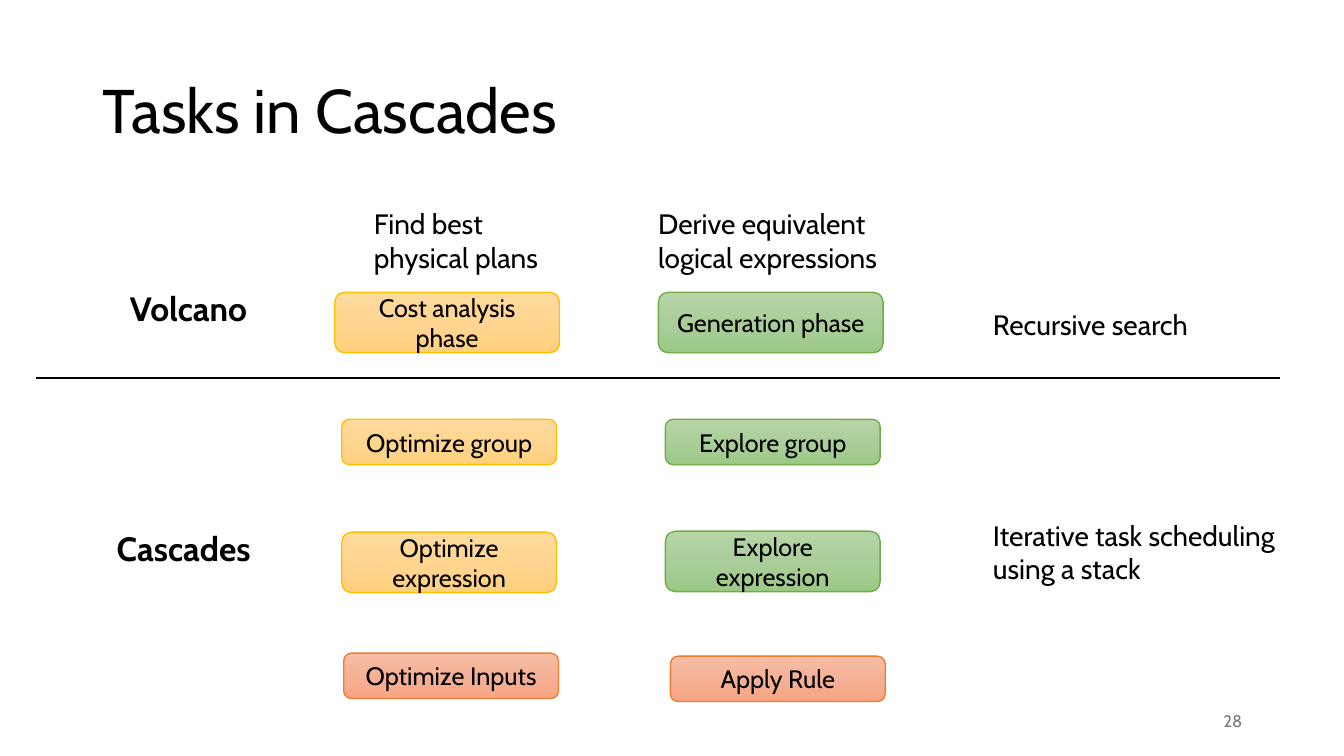
from copy import deepcopy

from lxml import etree
from pptx import Presentation
from pptx.dml.color import RGBColor
from pptx.enum.shapes import MSO_CONNECTOR, MSO_SHAPE
from pptx.enum.text import MSO_ANCHOR, PP_ALIGN
from pptx.oxml.ns import qn
from pptx.util import Inches, Pt

ROUNDED = MSO_SHAPE.ROUNDED_RECTANGLE
STRAIGHT = MSO_CONNECTOR.STRAIGHT
TOP, MIDDLE = MSO_ANCHOR.TOP, MSO_ANCHOR.MIDDLE
LEFT, CENTER, RIGHT = PP_ALIGN.LEFT, PP_ALIGN.CENTER, PP_ALIGN.RIGHT

BLACK = RGBColor(0x00, 0x00, 0x00)
GRAY = RGBColor(0x79, 0x79, 0x79)
GOLD_LINE = RGBColor(0xFF, 0xC0, 0x00)
GOLD_TOP = RGBColor(0xFF, 0xDB, 0x9E)
GOLD_MIDDLE = RGBColor(0xFF, 0xD5, 0x90)
GOLD_BOTTOM = RGBColor(0xFF, 0xD0, 0x7C)
GREEN_LINE = RGBColor(0x70, 0xAD, 0x47)
GREEN_TOP = RGBColor(0xB5, 0xD5, 0xA7)
GREEN_MIDDLE = RGBColor(0xAA, 0xCE, 0x9A)
GREEN_BOTTOM = RGBColor(0x9C, 0xC9, 0x87)
ORANGE_LINE = RGBColor(0xED, 0x7D, 0x31)
ORANGE_TOP = RGBColor(0xF7, 0xBD, 0xA5)
ORANGE_MIDDLE = RGBColor(0xF5, 0xB1, 0x96)
ORANGE_BOTTOM = RGBColor(0xF8, 0xA5, 0x82)

GOLD = (GOLD_LINE, GOLD_TOP, GOLD_MIDDLE, GOLD_BOTTOM)
GREEN = (GREEN_LINE, GREEN_TOP, GREEN_MIDDLE, GREEN_BOTTOM)
ORANGE = (ORANGE_LINE, ORANGE_TOP, ORANGE_MIDDLE, ORANGE_BOTTOM)


class SlideBuilder:
    """Draws styled elements on the current slide."""

    font_name = "Cabin"
    task_size = 18
    label_size = 20
    heading_size = 24

    def __init__(self, slide):
        self.slide = slide

    def add_words(self, shape, text, size, color=BLACK, bold=False,
                  align=LEFT, anchor=TOP, wrap=True):
        frame = shape.text_frame
        frame.word_wrap = wrap
        frame.vertical_anchor = anchor
        paragraph = frame.paragraphs[0]
        paragraph.alignment = align
        run = paragraph.add_run()
        run.text = text
        run.font.name = self.font_name
        run.font.size = Pt(size)
        run.font.bold = bold
        run.font.color.rgb = color
        return paragraph

    def label(self, left, top, width, height, text, size, **style):
        box = self.slide.shapes.add_textbox(
            Inches(left), Inches(top), Inches(width), Inches(height))
        return self.add_words(box, text, size, **style)

    def task(self, left, top, width, height, text, palette):
        line_color, *stop_colors = palette
        shape = self.slide.shapes.add_shape(
            ROUNDED, Inches(left), Inches(top), Inches(width), Inches(height))
        shape.shadow.inherit = False
        shape.line.color.rgb = line_color
        shape.line.width = Pt(1)
        shape.fill.gradient()
        shape.fill.gradient_angle = 270
        first_stop = next(shape._element.spPr.iter(qn("a:gs")))
        first_stop.addnext(deepcopy(first_stop))
        for index, (stop, color) in enumerate(
                zip(shape.fill.gradient_stops, stop_colors)):
            stop.position = index / 2
            stop.color.rgb = color
        self.add_words(shape, text, self.task_size, align=CENTER, anchor=MIDDLE)

    def divider(self, left, right, top):
        connector = self.slide.shapes.add_connector(
            STRAIGHT, Inches(left), Inches(top), Inches(right), Inches(top))
        connector.line.color.rgb = BLACK
        connector.line.width = Pt(1.5)
        etree.SubElement(connector._element.spPr, qn("a:effectLst"))


def main():
    presentation = Presentation()
    presentation.slide_width = Inches(13.33)
    presentation.slide_height = Inches(7.5)
    slide = presentation.slides.add_slide(presentation.slide_layouts[6])
    builder = SlideBuilder(slide)

    title = builder.label(0.92, 0.4, 11.5, 1.45, "Tasks in Cascades", 44, anchor=MIDDLE)
    title.line_spacing = 0.9
    builder.label(9.42, 6.95, 3, 0.4, "28", 12, color=GRAY, align=RIGHT, anchor=MIDDLE)

    for left, top, width, height, text, palette in (
        (3.32, 2.9, 2.23, 0.6, "Cost analysis phase", GOLD),
        (6.53, 2.9, 2.23, 0.6, "Generation phase", GREEN),
        (3.39, 4.16, 2.13, 0.45, "Optimize group", GOLD),
        (6.6, 4.16, 2.13, 0.45, "Explore group", GREEN),
        (3.39, 5.28, 2.13, 0.6, "Optimize expression", GOLD),
        (6.6, 5.27, 2.13, 0.6, "Explore expression", GREEN),
        (3.41, 6.48, 2.13, 0.45, "Optimize Inputs", ORANGE),
        (6.65, 6.51, 2.13, 0.45, "Apply Rule", ORANGE),
    ):
        builder.task(left, top, width, height, text, palette)

    for left, top, width, height, text, wrap in (
        (3.61, 2, 2.13, 0.77, "Find best physical plans", True),
        (6.43, 2, 2.77, 0.77, "Derive equivalent logical expressions", True),
        (9.75, 3, 2.27, 0.44, "Recursive search", False),
        (9.75, 5.09, 3.06, 1.11, "Iterative task scheduling using a stack", True),
    ):
        builder.label(left, top, width, height, text, builder.label_size, wrap=wrap)

    for left, top, width, text in (
        (1.19, 2.81, 1.44, "Volcano"),
        (1.06, 5.19, 1.73, "Cascades"),
    ):
        builder.label(left, top, width, 0.5, text, builder.heading_size,
                      bold=True, wrap=False)

    builder.divider(0.36, 12.7, 3.75)
    presentation.save("out.pptx")


if __name__ == "__main__":
    main()
